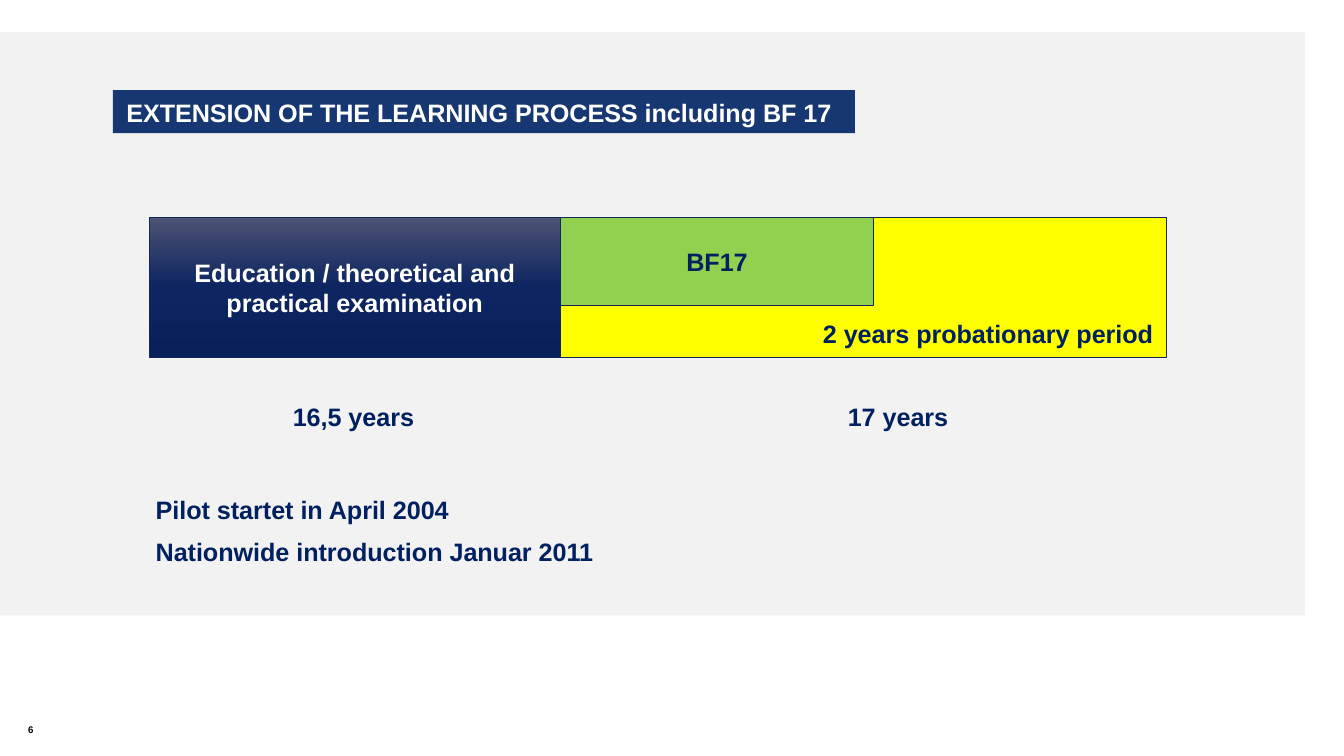
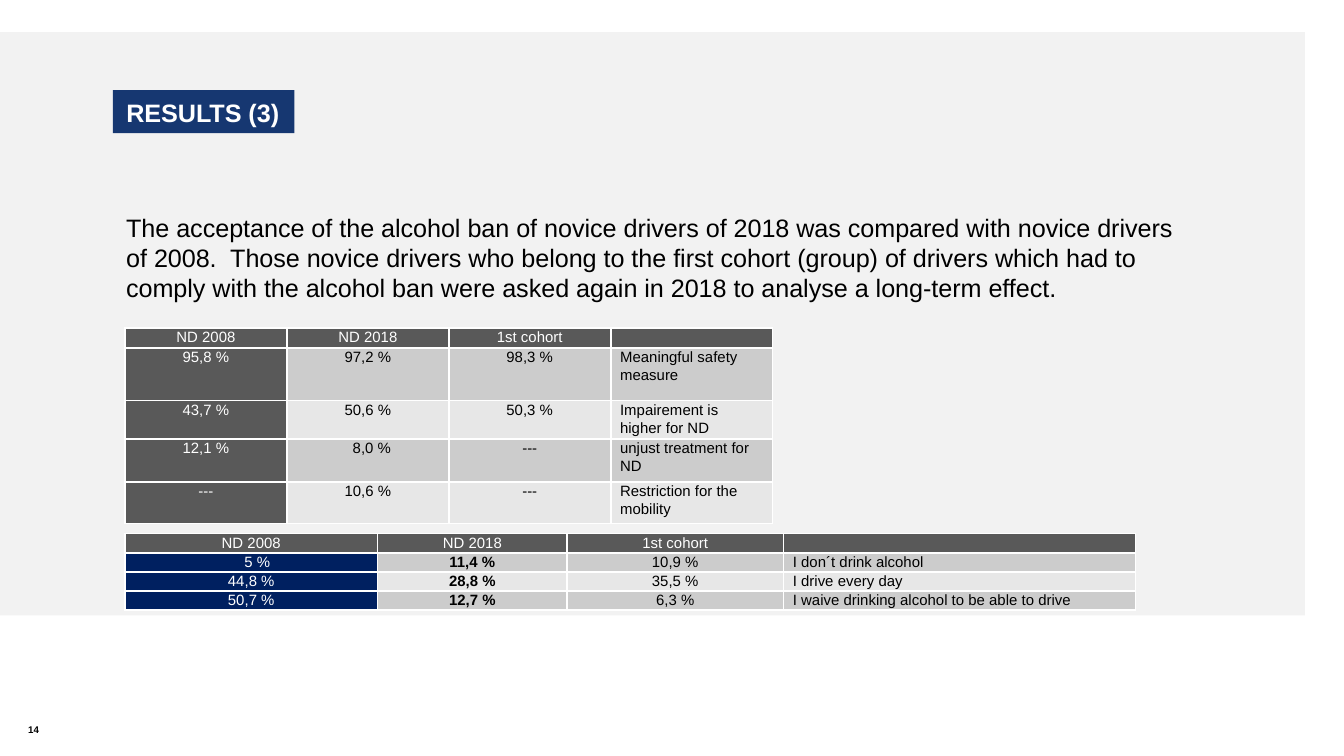
"""Build two slides on novice drivers: the learning process and survey results."""
from copy import deepcopy

from lxml.etree import SubElement
from pptx import Presentation
from pptx.dml.color import RGBColor
from pptx.enum.shapes import MSO_SHAPE
from pptx.enum.text import MSO_ANCHOR, MSO_AUTO_SIZE, PP_ALIGN
from pptx.oxml import parse_xml
from pptx.oxml.ns import nsdecls, qn
from pptx.util import Inches, Pt

WHITE = RGBColor(0xFF, 0xFF, 0xFF)
BLACK = RGBColor(0, 0, 0)
PANEL = RGBColor(0xF2, 0xF2, 0xF2)
TITLE_BLUE = RGBColor(0x16, 0x37, 0x71)
NAVY = RGBColor(0x00, 0x20, 0x60)
OUTLINE = RGBColor(0x11, 0x27, 0x5D)
YELLOW = RGBColor(0xFF, 0xFF, 0x00)
GREEN = RGBColor(0x92, 0xD0, 0x50)
DARK_GREY = RGBColor(0x59, 0x59, 0x59)
BANDS = (RGBColor(0xCC, 0xCC, 0xCC), RGBColor(0xE7, 0xE7, 0xE7))
GRADIENT = ((0, RGBColor(0x4C, 0x52, 0x73)), (0.5, RGBColor(0x0D, 0x25, 0x61)),
            (1, RGBColor(0x08, 0x20, 0x59)))

FONT = "Arial"
TEXT_SIZE, TABLE_SIZE, NUMBER_SIZE = 13.5, 8, 5.2
TITLE_LEFT, TITLE_TOP, TITLE_HEIGHT = 0.84, 0.67, 0.32
BAR_LEFT, BAR_TOP, BAR_HEIGHT = 1.11, 1.62, 1.04
EDUCATION_WIDTH, PROBATION_WIDTH = 3.06, 4.51
PROBATION_LEFT = BAR_LEFT + EDUCATION_WIDTH

PROCESS = {"title": "EXTENSION OF THE LEARNING PROCESS including BF 17",
           "title_width": 5.52, "number": "6"}
RESULTS = {"title": "RESULTS (3)", "title_width": 1.35, "number": "14"}

STAGES = [
    ("Education / theoretical and practical examination",
     (BAR_LEFT, BAR_TOP, EDUCATION_WIDTH, BAR_HEIGHT),
     GRADIENT, WHITE, PP_ALIGN.CENTER, MSO_ANCHOR.MIDDLE),
    ("2 years probationary period",
     (PROBATION_LEFT, BAR_TOP, PROBATION_WIDTH, BAR_HEIGHT),
     YELLOW, NAVY, PP_ALIGN.RIGHT, MSO_ANCHOR.BOTTOM),
    ("BF17", (PROBATION_LEFT, BAR_TOP, 2.33, 0.65),
     GREEN, NAVY, PP_ALIGN.CENTER, MSO_ANCHOR.MIDDLE),
]
LABELS = [
    ("16,5 years", (2.08, 2.94, 1.12, 0.33)),
    ("17 years", (6.21, 2.94, 1.01, 0.33)),
    ("Pilot startet in April 2004", (1.06, 3.63, 3.15, 0.4)),
    ("Nationwide introduction Januar 2011", (1.06, 3.94, 4.61, 0.4)),
]
SUMMARY = (
    "The acceptance of the alcohol ban of novice drivers of 2018 was compared "
    "with novice drivers of 2008.  Those novice drivers who belong to the first "
    "cohort (group) of drivers which had to comply with the alcohol ban were "
    "asked again in 2018 to analyse a long-term effect."
)
HEADER = ("ND 2008", "ND 2018", "1st cohort", "")
SURVEYS = [
    {"top": 2.44, "columns": [1.205] * 4, "heights": [0.15, 0.39, 0.26, 0.32, 0.31],
     "key_fill": DARK_GREY, "bold_column": None,
     "rows": [
         ("95,8 %", "97,2 %", "98,3 %", "Meaningful safety measure"),
         ("43,7 %", "50,6 %", "50,3 %", "Impairement is higher for ND"),
         ("12,1 %", "8,0 %", "---", "unjust treatment for ND"),
         ("---", "10,6 %", "---", "Restriction for the mobility")]},
    {"top": 3.97, "columns": [1.88, 1.41, 1.61, 2.62], "heights": [0.13] * 4,
     "key_fill": NAVY, "bold_column": 1,
     "rows": [
         ("5 %", "11,4 %", "10,9 %", "I don´t drink alcohol"),
         ("44,8 %", "28,8 %", "35,5 %", "I drive every day"),
         ("50,7 %", "12,7 %", "6,3 %", "I waive drinking alcohol to be able to drive")]},
]
EXTRA_INSET = {"8,0 %": 0.06, "5 %": 0.09}


def inches(place):
    return [Inches(length) for length in place]


def format_text(para, size, color, bold=False, align=PP_ALIGN.LEFT):
    para.alignment = align
    for span in para.runs:
        span.font.name = FONT
        span.font.size = Pt(size)
        span.font.bold = bold
        span.font.color.rgb = color


def add_text(slide, text, place, size, color, bold=False):
    box = slide.shapes.add_textbox(*inches(place))
    frame = box.text_frame
    frame.word_wrap = True
    frame.text = text
    format_text(frame.paragraphs[0], size, color, bold)
    return frame


def add_panel(slide, layout):
    panel = slide.shapes.add_shape(MSO_SHAPE.RECTANGLE, *inches((0, 0.24, 9.71, 4.34)))
    panel.shadow.inherit = False
    panel.fill.solid()
    panel.fill.fore_color.rgb = PANEL
    panel.line.fill.background()
    layout.shapes._spTree.insert(2, panel._element)


def add_page(deck, content):
    slide = deck.slides.add_slide(deck.slide_layouts[5])
    title = slide.shapes.title
    title.left, title.top, title.width, title.height = inches(
        (TITLE_LEFT, TITLE_TOP, content["title_width"], TITLE_HEIGHT))
    title.fill.solid()
    title.fill.fore_color.rgb = TITLE_BLUE
    frame = title.text_frame
    frame.text = content["title"]
    frame.vertical_anchor = MSO_ANCHOR.BOTTOM
    frame.margin_left = frame.margin_right = Inches(0.1)
    frame.margin_top, frame.margin_bottom = Inches(0.08), Inches(0.04)
    frame.word_wrap = False
    frame.auto_size = MSO_AUTO_SIZE.NONE
    frame.paragraphs[0].line_spacing = 0.9
    format_text(frame.paragraphs[0], TEXT_SIZE, WHITE, True)
    number = add_text(slide, content["number"], (0.21, 5.37, 3.38, 0.12),
                      NUMBER_SIZE, BLACK, True)
    number.vertical_anchor = MSO_ANCHOR.MIDDLE
    number.margin_left = number.margin_right = 0
    number.margin_top = number.margin_bottom = 0
    return slide


def fill_gradient(shape, stops):
    shape.fill.gradient()
    shape.fill.gradient_angle = 270
    stop_list = shape._element.spPr.find(qn("a:gradFill")).find(qn("a:gsLst"))
    stop_list.append(deepcopy(stop_list[0]))
    for stop, (position, color) in zip(shape.fill.gradient_stops, stops):
        stop.position = position
        stop.color.rgb = color


def add_stage(slide, text, place, fill, color, align, anchor):
    stage = slide.shapes.add_shape(MSO_SHAPE.RECTANGLE, *inches(place))
    stage.shadow.inherit = False
    if fill is GRADIENT:
        fill_gradient(stage, fill)
    else:
        stage.fill.solid()
        stage.fill.fore_color.rgb = fill
    stage.line.color.rgb = OUTLINE
    stage.line.width = Pt(0.5)
    frame = stage.text_frame
    frame.word_wrap = True
    frame.text = text
    frame.vertical_anchor = anchor
    frame.margin_top = frame.margin_bottom = Inches(0.07)
    format_text(frame.paragraphs[0], TEXT_SIZE, color, True, align)


def set_borders(cell):
    properties = cell._tc.get_or_add_tcPr()
    for index, side in enumerate(("lnL", "lnR", "lnT", "lnB")):
        properties.insert(index, parse_xml(
            f'<a:{side} {nsdecls("a")} w="{Pt(1)}"><a:solidFill>'
            f'<a:srgbClr val="{WHITE}"/></a:solidFill></a:{side}>'))


def format_cell(cell, text, fill, color, bold, align):
    cell.text = text
    cell.fill.solid()
    cell.fill.fore_color.rgb = fill
    cell.margin_left = Inches(0.07 + EXTRA_INSET.get(text, 0))
    cell.margin_right = Inches(0.07)
    cell.margin_top = cell.margin_bottom = 0
    para = cell.text_frame.paragraphs[0]
    para.line_spacing = 1.07
    format_text(para, TABLE_SIZE, color, bold, align)
    if not text:
        SubElement(para._p, qn("a:endParaRPr")).set("sz", str(TABLE_SIZE * 100))
    set_borders(cell)


def add_survey(slide, survey):
    rows = [HEADER] + survey["rows"]
    place = (0.93, survey["top"], sum(survey["columns"]), sum(survey["heights"]))
    table = slide.shapes.add_table(len(rows), len(HEADER), *inches(place)).table
    for column, width in zip(table.columns, survey["columns"]):
        column.width = Inches(width)
    for row, height in zip(table.rows, survey["heights"]):
        row.height = Inches(height)
    for r, row in enumerate(rows):
        for c, text in enumerate(row):
            if r == 0:
                fill = DARK_GREY
            elif c == 0:
                fill = survey["key_fill"]
            else:
                fill = BANDS[(r - 1) % 2]
            color = BLACK if r and c else WHITE
            bold = r > 0 and c == survey["bold_column"]
            align = PP_ALIGN.LEFT if c == len(HEADER) - 1 else PP_ALIGN.CENTER
            format_cell(table.cell(r, c), text, fill, color, bold, align)


def main():
    deck = Presentation()
    deck.slide_width = Inches(10)
    deck.slide_height = deck.slide_width * 9 // 16

    process = add_page(deck, PROCESS)
    add_panel(process, process.slide_layout)
    for stage in STAGES:
        add_stage(process, *stage)
    for text, place in LABELS:
        label = add_text(process, text, place, TEXT_SIZE, NAVY, True)
        label.word_wrap = False
        label.auto_size = MSO_AUTO_SIZE.SHAPE_TO_FIT_TEXT

    results = add_page(deck, RESULTS)
    summary = add_text(results, SUMMARY, (0.84, 1.53, 8.01, 0.87), TEXT_SIZE, BLACK)
    summary.paragraphs[0].space_after = Pt(6)
    for survey in SURVEYS:
        add_survey(results, survey)

    deck.save("out.pptx")


if __name__ == "__main__":
    main()
